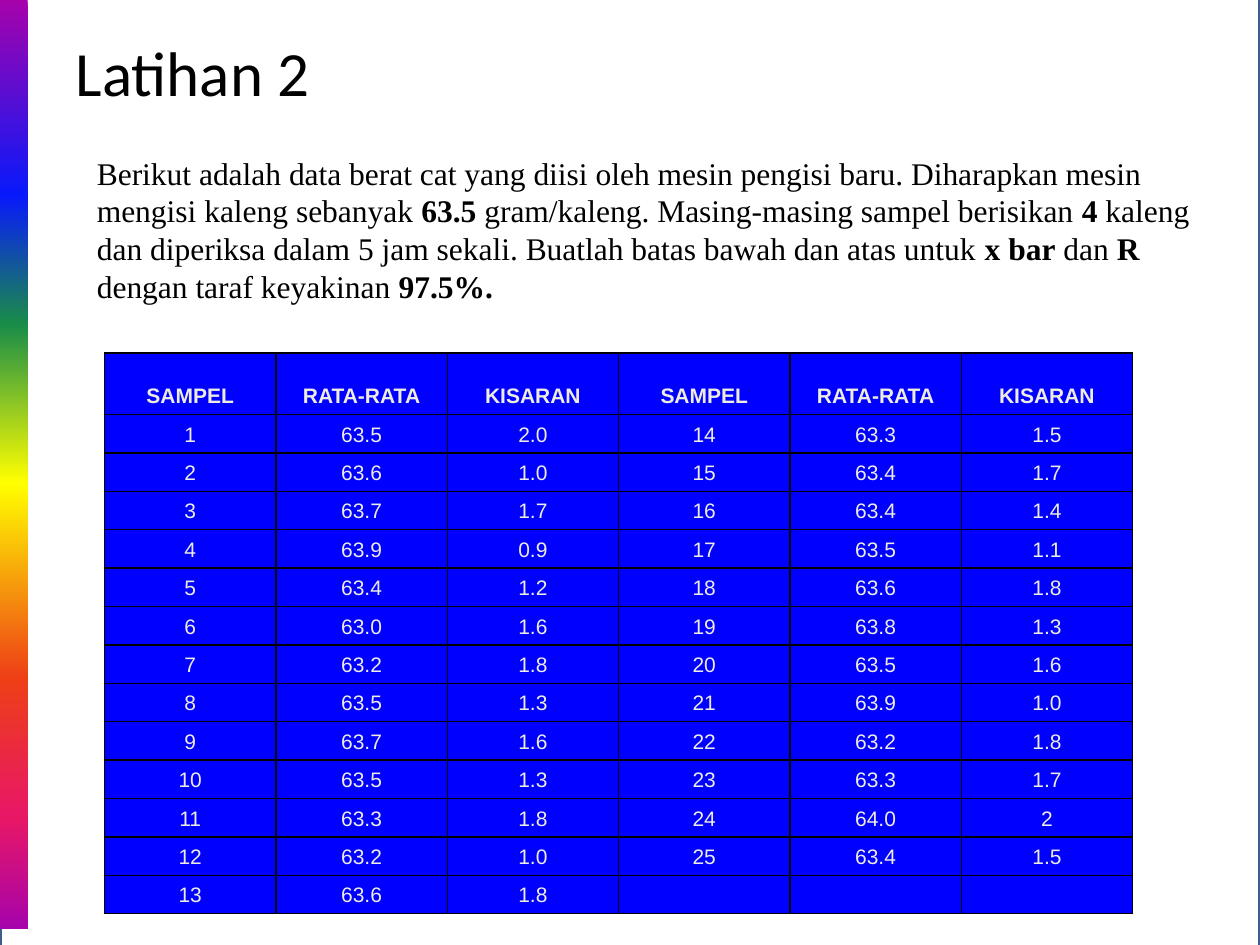
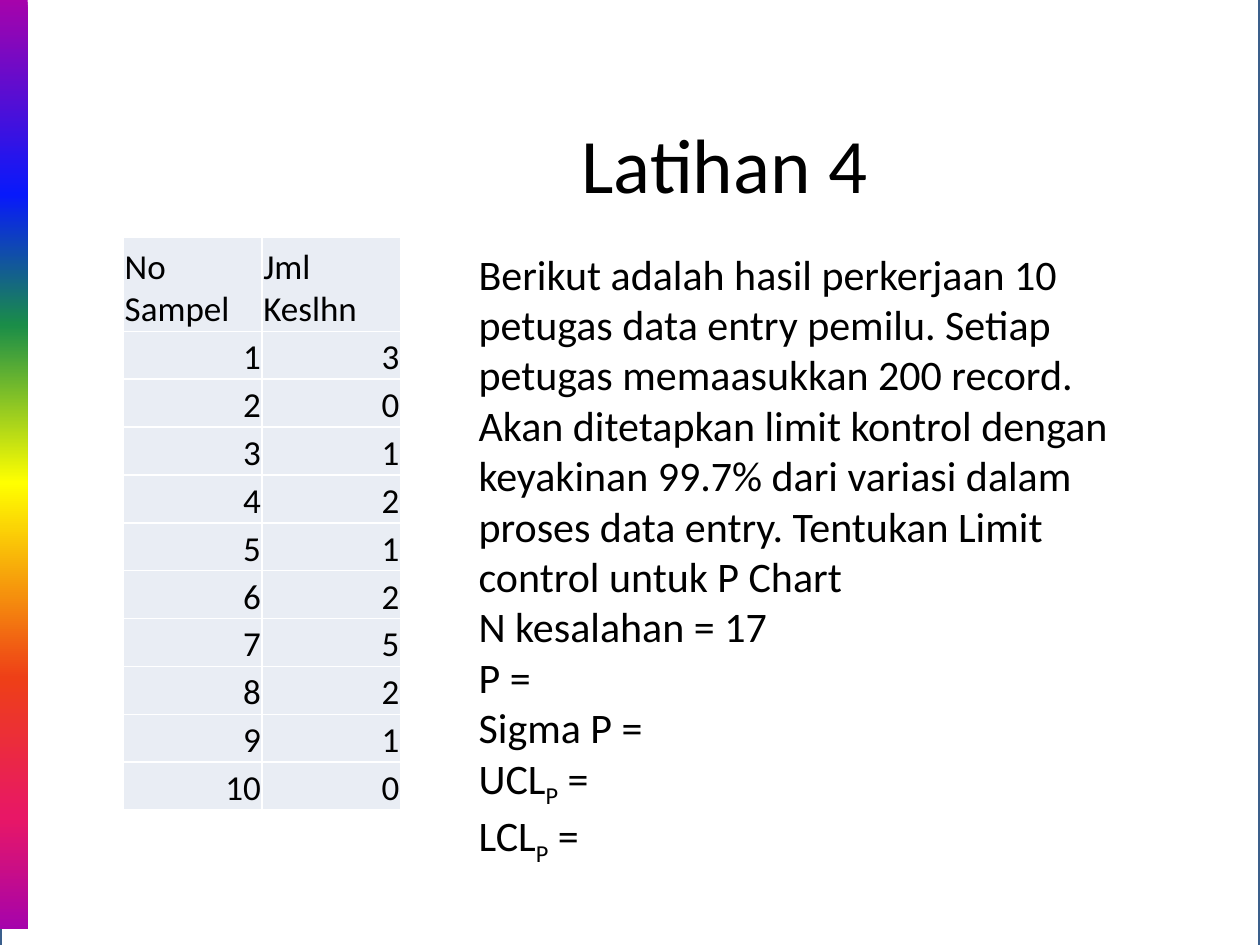
"""Builds two exercise slides on statistical control charts."""
from lxml import etree
from pptx import Presentation
from pptx.dml.color import RGBColor
from pptx.enum.shapes import MSO_SHAPE
from pptx.enum.text import MSO_ANCHOR, PP_ALIGN
from pptx.oxml import parse_xml
from pptx.oxml.ns import nsdecls, qn
from pptx.util import Inches, Pt

RECTANGLE = MSO_SHAPE.RECTANGLE
MIDDLE, BOTTOM = MSO_ANCHOR.MIDDLE, MSO_ANCHOR.BOTTOM
LEFT, CENTER, RIGHT = PP_ALIGN.LEFT, PP_ALIGN.CENTER, PP_ALIGN.RIGHT

BLACK = RGBColor(0x00, 0x00, 0x00)
WHITE = RGBColor(0xFF, 0xFF, 0xFF)
FRAME_BLUE = RGBColor(0x3A, 0x5F, 0x8C)
TABLE_BLUE = RGBColor(0x00, 0x00, 0xFF)
CREAM = RGBColor(0xEE, 0xEC, 0xE1)
PALE_BLUE = RGBColor(0xE9, 0xED, 0xF4)
RAINBOW = [
    (0, RGBColor(0xA6, 0x03, 0xAB)),
    (21, RGBColor(0x08, 0x19, 0xFB)),
    (35, RGBColor(0x1A, 0x8D, 0x48)),
    (52, RGBColor(0xFF, 0xFF, 0x00)),
    (73, RGBColor(0xEE, 0x3F, 0x17)),
    (88, RGBColor(0xE8, 0x17, 0x66)),
    (100, RGBColor(0xA6, 0x03, 0xAB)),
]

WEIGHT_HEADINGS = ["SAMPEL", "RATA-RATA", "KISARAN"]
MEANS = """63.5 63.6 63.7 63.9 63.4 63.0 63.2 63.5 63.7 63.5 63.3 63.2 63.6
63.3 63.4 63.4 63.5 63.6 63.8 63.5 63.9 63.2 63.3 64.0 63.4""".split()
RANGES = """2.0 1.0 1.7 0.9 1.2 1.6 1.8 1.3 1.6 1.3 1.8 1.0 1.8
1.5 1.7 1.4 1.1 1.8 1.3 1.6 1.0 1.8 1.7 2 1.5""".split()
SAMPLES_PER_BLOCK = 13
ERROR_COUNTS = [3, 0, 1, 2, 1, 2, 5, 2, 1, 0]

PAINT_TASK = [[
    ("Berikut adalah data berat cat yang diisi oleh mesin pengisi baru. "
     "Diharapkan mesin mengisi kaleng sebanyak ", ""),
    ("63.5", "bold"),
    (" gram/kaleng. Masing-masing sampel berisikan ", ""),
    ("4 ", "bold"),
    ("kaleng dan diperiksa dalam 5 jam sekali. "
     "Buatlah batas bawah dan atas untuk ", ""),
    ("x bar", "bold"),
    (" dan ", ""),
    ("R ", "bold"),
    ("dengan taraf keyakinan ", ""),
    ("97.5%.", "bold"),
]]
ENTRY_TASK = [
    [("Berikut adalah hasil perkerjaan 10 petugas data entry pemilu. Setiap "
      "petugas memaasukkan 200 record. Akan ditetapkan limit kontrol dengan "
      "keyakinan 99.7% dari variasi dalam proses data entry. Tentukan Limit "
      "control untuk P Chart", "")],
    [("N kesalahan = 17", "")],
    [("P =", "")],
    [("Sigma P =", "")],
    [("UCL", ""), ("P", "subscript"), (" =", "")],
    [("LCL", ""), ("P", "subscript"), (" =", "")],
]


def set_font(paragraph, name, size, color, bold=False):
    """Format a whole paragraph."""
    font = paragraph.font
    font.name, font.size, font.bold = name, Pt(size), bold
    font.color.rgb = color


def add_band(slide, left, top, width, height):
    """Add a plain rectangle without shadow."""
    band = slide.shapes.add_shape(
        RECTANGLE, Inches(left), Inches(top), Inches(width), Inches(height))
    band.shadow.inherit = False
    return band


def fill_rainbow(band):
    """Fill a band with the vertical rainbow gradient."""
    band.fill.gradient()
    band.fill.gradient_angle = 270
    stops = band.element.spPr.find(qn("a:gradFill")).find(qn("a:gsLst"))
    for stop in list(stops):
        stops.remove(stop)
    for position, color in RAINBOW:
        stops.append(parse_xml(
            f'<a:gs {nsdecls("a")} pos="{position * 1000}">'
            f'<a:srgbClr val="{color}"/></a:gs>'))


def decorate_master(master, slide):
    """Put the page frame and the rainbow strip behind every slide."""
    frame = add_band(slide, 0, -0.11, 10, 7.8)
    frame.fill.solid()
    frame.fill.fore_color.rgb = WHITE
    tint = frame.element.spPr.find(qn("a:solidFill")).find(qn("a:srgbClr"))
    etree.SubElement(tint, qn("a:alpha")).set("val", "96000")
    frame.line.color.rgb = FRAME_BLUE
    frame.line.width = Pt(2)

    strip = add_band(slide, 0, 0, 0.22, 7.37)
    fill_rainbow(strip)
    strip.line.fill.background()

    for order, band in enumerate((frame, strip)):
        band.element.nvSpPr.cNvPr.set("id", str(101 + order))
        master.shapes.element.insert(2 + order, band.element)


def set_title(slide, text, box, size, align):
    """Place and format the slide title."""
    title = slide.shapes.title
    title.left, title.top, title.width, title.height = map(Inches, box)
    title.text_frame.text = text
    title.text_frame.vertical_anchor = MIDDLE
    heading = title.text_frame.paragraphs[0]
    heading.alignment = align
    set_font(heading, "Calibri", size, BLACK)


def add_task(slide, paragraphs, box, font_name, size):
    """Add the exercise text, with bold and subscript runs."""
    frame = slide.shapes.add_textbox(*map(Inches, box)).text_frame
    frame.word_wrap = True
    for index, pieces in enumerate(paragraphs):
        line = frame.add_paragraph() if index else frame.paragraphs[0]
        set_font(line, font_name, size, BLACK)
        for text, style in pieces:
            run = line.add_run()
            run.text = text
            if style == "bold":
                run.font.bold = True
            elif style == "subscript":
                run.font._element.set("baseline", "-25000")


def set_borders(cell, color):
    """Draw a one-point line on all four sides of a cell."""
    properties = cell._tc.get_or_add_tcPr()
    for order, side in enumerate(("lnL", "lnR", "lnT", "lnB")):
        properties.insert(order, parse_xml(
            f'<a:{side} {nsdecls("a")} w="12700"><a:solidFill>'
            f'<a:srgbClr val="{color}"/></a:solidFill></a:{side}>'))


def add_grid(slide, rows, place, column_width, heights, fill, border):
    """Add a table of uniformly filled cells and return it."""
    header_height, row_height = heights
    columns = len(rows[0])
    grid = slide.shapes.add_table(
        len(rows), columns, *map(Inches, place),
        Inches(column_width * columns),
        Inches(header_height + row_height * (len(rows) - 1))).table
    grid.first_row = grid.horz_banding = False
    for column in grid.columns:
        column.width = Inches(column_width)
    for r, values in enumerate(rows):
        grid.rows[r].height = Inches(row_height if r else header_height)
        for c, value in enumerate(values):
            cell = grid.cell(r, c)
            cell.text = str(value)
            cell.vertical_anchor = BOTTOM
            cell.fill.solid()
            cell.fill.fore_color.rgb = fill
            set_borders(cell, border)
    return grid


def format_cells(grid, font_name, size, color, header_align, align, bold_header):
    """Set alignment and font for the header row and the rows below it."""
    for r, row in enumerate(grid.rows):
        for cell in row.cells:
            entry = cell.text_frame.paragraphs[0]
            entry.alignment = align if r else header_align
            set_font(entry, font_name, size, color, bold_header and r == 0)
            if not cell.text:
                entry._p.get_or_add_endParaRPr().set("sz", str(size * 100))


def weight_rows():
    """Lay the samples out in two blocks side by side."""
    samples = [(number, mean, spread) for number, (mean, spread)
               in enumerate(zip(MEANS, RANGES), start=1)]
    first = samples[:SAMPLES_PER_BLOCK]
    second = samples[SAMPLES_PER_BLOCK:]
    second += [("", "", "")] * (len(first) - len(second))
    return [WEIGHT_HEADINGS * 2] + [a + b for a, b in zip(first, second)]


def build_paint_slide(slide):
    """Exercise 2: mean and range limits for paint weights."""
    set_title(slide, "Latihan 2", (0.5, 0.3, 3.08, 0.53), 36, LEFT)
    weights = add_grid(slide, weight_rows(), (0.83, 2.8), 1.36,
                       (0.49, 0.305), TABLE_BLUE, BLACK)
    format_cells(weights, "Arial", 12, CREAM, CENTER, CENTER, True)
    add_task(slide, PAINT_TASK, (0.67, 1.17, 8.92, 1.3), "Times New Roman", 18)


def build_entry_slide(slide):
    """Exercise 4: P chart limits for data entry errors."""
    set_title(slide, "Latihan 4", (1.5, 0.67, 8.5, 1.25), 44, CENTER)
    rows = [("No Sampel", "Jml Keslhn"), *enumerate(ERROR_COUNTS, start=1)]
    errors = add_grid(slide, rows, (0.98, 1.88), 1.1, (0.75, 0.38),
                      PALE_BLUE, WHITE)
    format_cells(errors, "Calibri", 20, BLACK, LEFT, RIGHT, False)
    for cell in errors.iter_cells():
        cell.margin_left = cell.margin_right = cell.margin_top = Inches(0.01)
        cell.margin_bottom = 0
    add_task(slide, ENTRY_TASK, (3.7, 1.92, 5.51, 4.95), "Calibri", 24)


def main():
    """Build and save the slides."""
    deck = Presentation()
    deck.slide_width, deck.slide_height = Inches(10), Inches(7.5)
    title_only = deck.slide_layouts[5]
    paint_slide = deck.slides.add_slide(title_only)
    decorate_master(deck.slide_master, paint_slide)
    build_paint_slide(paint_slide)
    build_entry_slide(deck.slides.add_slide(title_only))
    deck.save("out.pptx")


if __name__ == "__main__":
    main()
